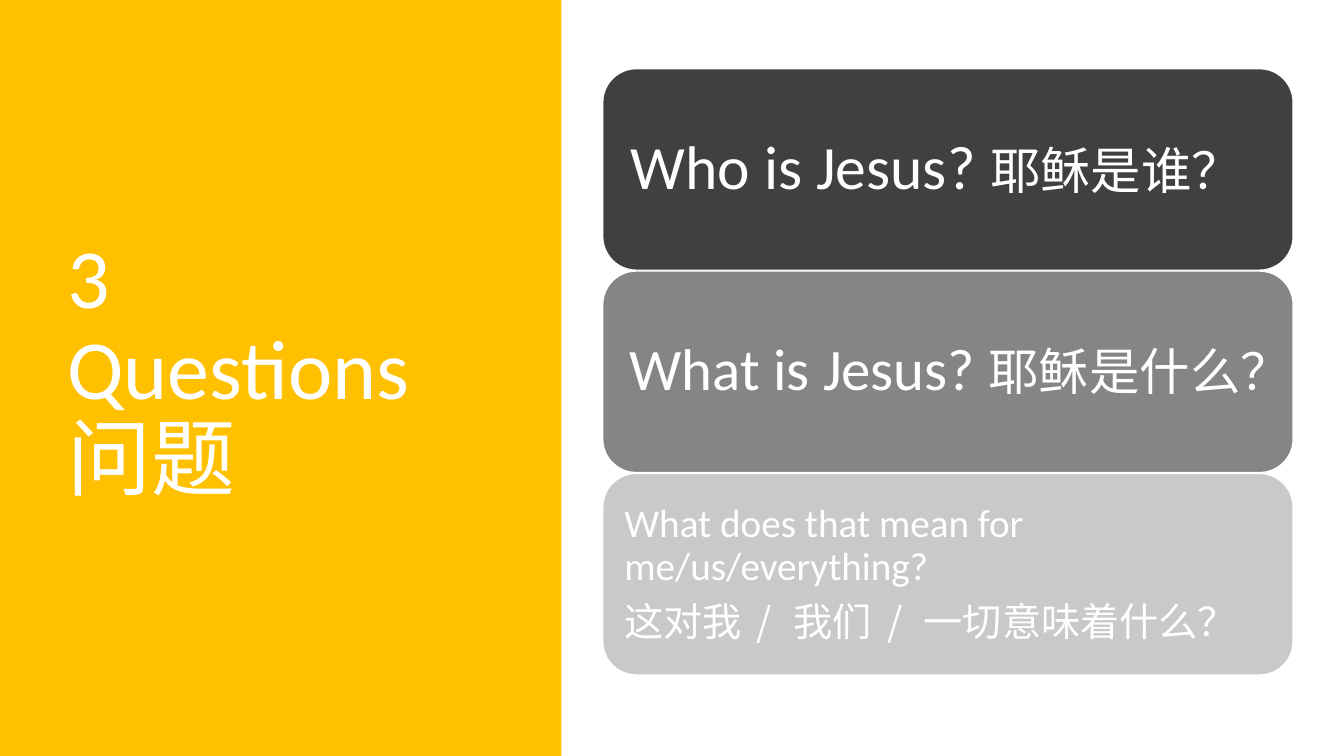
from dataclasses import dataclass

from lxml.etree import SubElement
from pptx import Presentation
from pptx.dml.color import RGBColor
from pptx.enum.lang import MSO_LANGUAGE_ID
from pptx.enum.shapes import MSO_SHAPE
from pptx.enum.text import MSO_ANCHOR, PP_ALIGN
from pptx.oxml.ns import qn
from pptx.util import Cm, Pt


@dataclass(frozen=True)
class Theme:
    accent: str = "FFC000"
    white: str = "FFFFFF"
    cards: tuple = ("404040", "858585", "C9C9C9")
    latin: str = "Calibri"
    chinese: str = "Noto Sans CJK JP"
    title: int = 60
    question: int = 44
    question_tight: int = 42
    question_chinese: int = 36
    small: int = 28


THEME = Theme()


def add_shape(s, kind, box, fill, line=None):
    sp = s.shapes.add_shape(kind, *(Cm(v) for v in box))
    sp.shadow.inherit = False
    sp.fill.solid()
    sp.fill.fore_color.rgb = RGBColor.from_string(fill)
    if line:
        sp.line.color.rgb = RGBColor.from_string(line)
        sp.line.width = Pt(1)
    else:
        sp.line.fill.background()
    return sp


def setup_frame(tf, inset):
    tf.word_wrap = True
    tf.vertical_anchor = MSO_ANCHOR.MIDDLE
    tf.margin_left = tf.margin_right = Cm(inset)
    tf.margin_top = tf.margin_bottom = Cm(inset)


def add_run(p, text, size, chinese=False, spacing=0):
    r = p.add_run()
    r.text = text
    r.font.size = Pt(size)
    r.font.color.rgb = RGBColor.from_string(THEME.white)
    r.font.name = THEME.chinese if chinese else THEME.latin
    if chinese:
        r.font.language_id = MSO_LANGUAGE_ID.SIMPLIFIED_CHINESE
        SubElement(r.font._element, qn("a:ea"), typeface=THEME.chinese)
    if spacing:
        r.font._element.set("spc", str(spacing))


def add_paragraph(tf, first, runs, after=0):
    p = tf.paragraphs[0] if first else tf.add_paragraph()
    p.alignment = PP_ALIGN.LEFT
    p.line_spacing = 0.9
    p.space_after = Pt(after)
    for run in runs:
        add_run(p, *run)
    return p


def add_title(s):
    tf = s.shapes.add_textbox(Cm(1.45), Cm(1.73), Cm(10.57), Cm(15.29)).text_frame
    setup_frame(tf, 0.25)
    p = add_paragraph(tf, True, [("3 Questions", THEME.title)])
    p.add_line_break()
    add_run(p, "问题", THEME.title, True)


def add_card(s, index, fill, inset, paragraphs):
    box = (15.19, 1.73 + 5.1 * index, 17.4, 5.08)
    sp = add_shape(s, MSO_SHAPE.ROUNDED_RECTANGLE, box, fill, THEME.white)
    setup_frame(sp.text_frame, inset)
    for i, runs in enumerate(paragraphs):
        add_paragraph(sp.text_frame, i == 0, runs, after=0.35 * runs[0][1])


def main():
    prs = Presentation()
    prs.slide_width, prs.slide_height = Cm(33.87), Cm(19.05)
    s = prs.slides.add_slide(prs.slide_layouts[6])

    # Title panel
    add_shape(s, MSO_SHAPE.RECTANGLE, (0, 0, 14.15, 19.05), THEME.accent)
    add_title(s)

    # Question cards: inset and paragraphs of runs
    t = THEME
    slash = (" / ", t.small, True, 450)
    cards = [
        (0.46, [[("Who is Jesus? ", t.question),
                 ("耶稣是谁？", t.question_chinese, True)]]),
        (0.43, [[("What is Jesus? ", t.question_tight),
                 ("耶稣是什么？", t.question_chinese, True)]]),
        (0.3, [[("What does that mean for me/us/everything?", t.small)],
               [("这对我", t.small, True), slash,
                ("我们", t.small, True), slash,
                ("一切意味着什么？", t.small, True)]]),
    ]
    for i, (fill, (inset, paragraphs)) in enumerate(zip(t.cards, cards)):
        add_card(s, i, fill, inset, paragraphs)

    prs.save("out.pptx")


if __name__ == "__main__":
    main()
